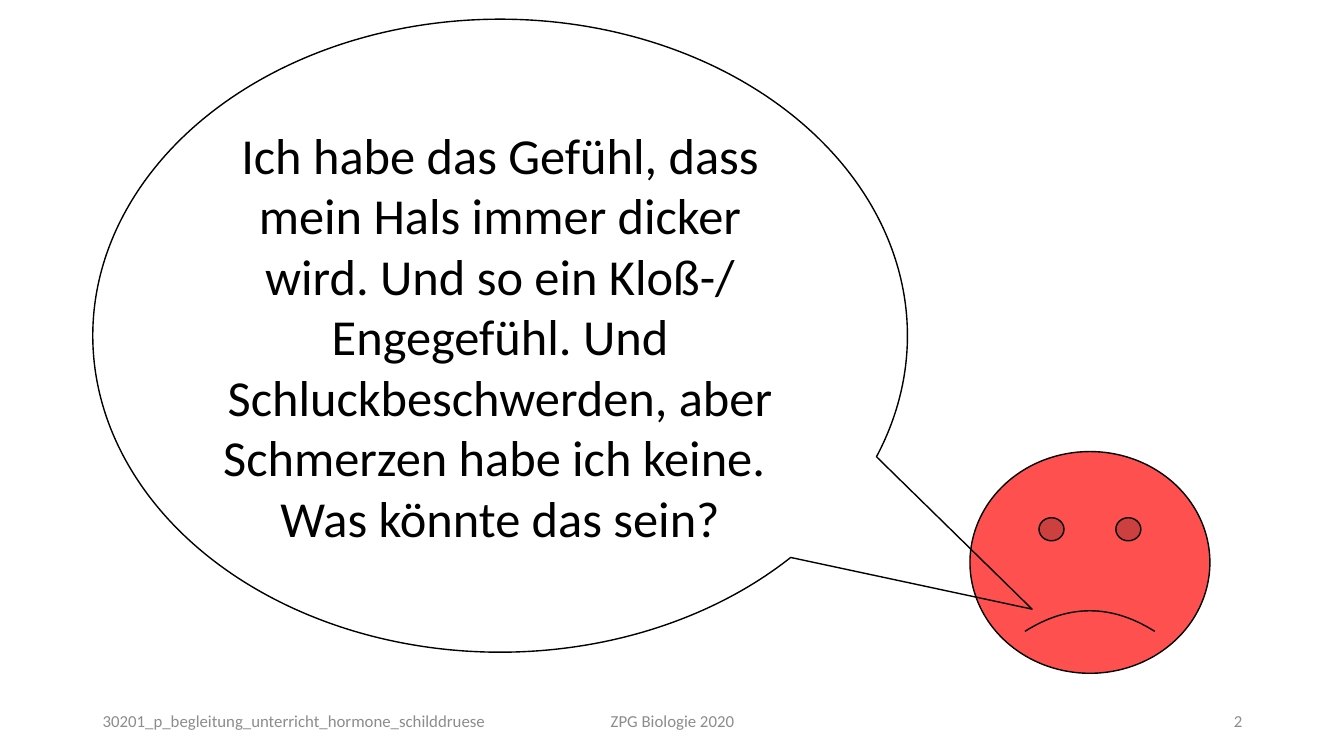
from pptx import Presentation
from pptx.dml.color import RGBColor
from pptx.enum.shapes import MSO_SHAPE as Shape
from pptx.enum.text import MSO_ANCHOR as Anchor, PP_ALIGN as Align
from pptx.util import Inches, Pt

BLACK = RGBColor(0x00, 0x00, 0x00)
FACE_RED = RGBColor(0xFF, 0x50, 0x50)
FOOTER_GRAY = RGBColor(0x8C, 0x8C, 0x8C)

COMPLAINT = [
    "Ich habe das Gefühl, dass mein Hals immer dicker wird. Und so ein Kloß-/ "
    "Engegefühl. Und Schluckbeschwerden, aber Schmerzen habe ich keine. ",
    "Was könnte das sein?",
]
FOOTER = [
    ("30201_p_begleitung_unterricht_hormone_schilddruese", 0, 4.3, Align.LEFT),
    ("ZPG Biologie 2020", 3.5, 4.5, Align.CENTER),
    ("2", 8.5, 3, Align.RIGHT),
]


def write(frame, lines, align, size, color):
    frame.word_wrap = True
    frame.vertical_anchor = Anchor.MIDDLE
    font_format = {"name": "Calibri", "size": Pt(size)}
    for index, line in enumerate(lines):
        paragraph = frame.add_paragraph() if index else frame.paragraphs[0]
        paragraph.alignment = align
        run = paragraph.add_run()
        run.text = line
        run.font.color.rgb = color
        for key, value in font_format.items():
            setattr(run.font, key, value)


def add_outlined(slide, kind, box, adjustments):
    figure = slide.shapes.add_shape(kind, *map(Inches, box))
    figure.shadow.inherit = False
    figure.line.color.rgb = BLACK
    figure.line.width = Pt(1)
    for index, value in enumerate(adjustments):
        figure.adjustments[index] = value
    return figure


def add_patient(slide, box):
    face = add_outlined(slide, Shape.SMILEY_FACE, box, [-0.047])
    face.fill.solid()
    face.fill.fore_color.rgb = FACE_RED


def add_speech(slide, box):
    bubble = add_outlined(slide, Shape.OVAL_CALLOUT, box, [0.653, 0.432])
    bubble.fill.background()
    write(bubble.text_frame, COMPLAINT, Align.CENTER, 36, BLACK)


def add_footer(slide, left, top, height):
    for text, offset, width, align in FOOTER:
        box = (left + offset, top, width, height)
        entry = slide.shapes.add_textbox(*map(Inches, box))
        write(entry.text_frame, [text], align, 12, FOOTER_GRAY)


def main():
    deck = Presentation()
    deck.slide_width, deck.slide_height = Inches(13.33), Inches(7.5)
    slide = deck.slides.add_slide(deck.slide_layouts[6])
    add_patient(slide, (9.62, 4.48, 2.38, 2.2))
    add_speech(slide, (0.92, 0.19, 8.08, 6.28))
    add_footer(slide, 0.92, 6.95, 0.4)
    deck.save("out.pptx")


if __name__ == "__main__":
    main()
